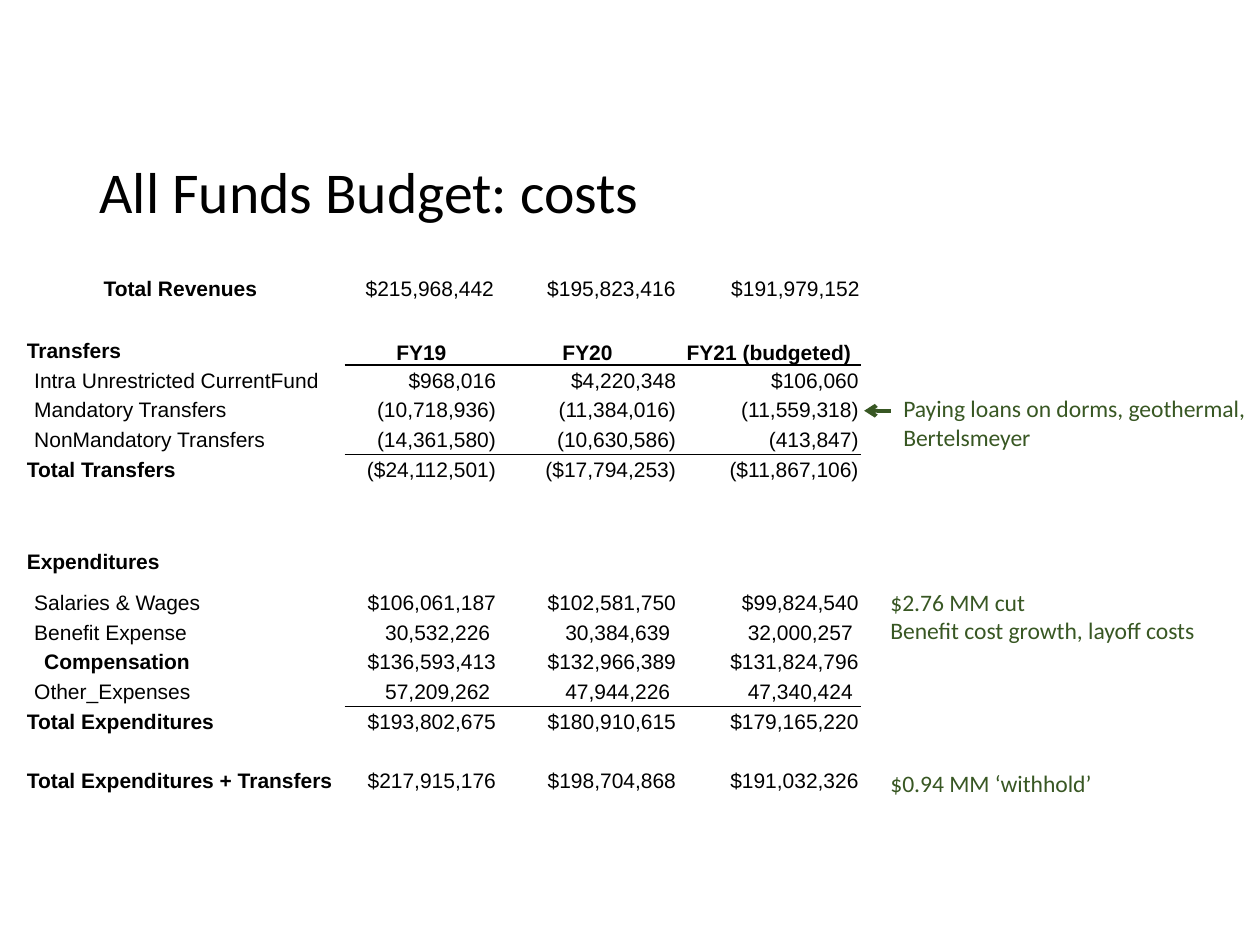
"""Build the All Funds Budget costs slide."""
import pptx
import pptx.dml.color
import pptx.enum.shapes
import pptx.enum.text
import pptx.oxml
import pptx.oxml.ns
import pptx.util

Cm = pptx.util.Cm
Pt = pptx.util.Pt
ALIGN = pptx.enum.text.PP_ALIGN
ANCHOR = pptx.enum.text.MSO_ANCHOR
INK, GREEN, PAPER = "000000", "385723", "FFFFFF"
INDENTS = (0.03, 0.18, 0.38)

TITLE_FONT = {"name": "Calibri", "size": Pt(33), "bold": False}
NOTE_FONT = {"name": "Calibri", "size": Pt(13.5)}
CELL_FONT = {"name": "Arial", "size": Pt(12)}
CELL_MARGINS = {"margin_top": Cm(0.03), "margin_right": Cm(0.03), "margin_bottom": 0}

REVENUES = [("Total Revenues", 0, True, "$215,968,442", "$195,823,416", "$191,979,152")]
BLANK = ("", 0, False, "", "", "")
COSTS = [
    ("Transfers", 0, True, "FY19", "FY20", "FY21 (budgeted)"),
    ("Intra Unrestricted CurrentFund", 1, False, "$968,016", "$4,220,348", "$106,060"),
    ("Mandatory Transfers", 1, False, "(10,718,936)", "(11,384,016)", "(11,559,318)"),
    ("NonMandatory Transfers", 1, False, "(14,361,580)", "(10,630,586)", "(413,847)"),
    ("Total Transfers", 0, True, "($24,112,501)", "($17,794,253)", "($11,867,106)"),
    BLANK,
    ("Expenditures", 0, True, "", "", ""),
    ("Salaries & Wages", 1, False, "$106,061,187", "$102,581,750", "$99,824,540"),
    ("Benefit Expense", 1, False, "30,532,226 ", "30,384,639 ", "32,000,257 "),
    ("Compensation", 2, True, "$136,593,413", "$132,966,389", "$131,824,796"),
    ("Other_Expenses", 1, False, "57,209,262 ", "47,944,226 ", "47,340,424 "),
    ("Total Expenditures", 0, True, "$193,802,675", "$180,910,615", "$179,165,220"),
    BLANK,
    ("Total Expenditures + Transfers", 0, True, "$217,915,176", "$198,704,868", "$191,032,326"),
]
COST_HEIGHTS = [1.04 if row in (5, 6) else 0.6 for row in range(len(COSTS))]


def color(value):
    return pptx.dml.color.RGBColor.from_string(value)


def apply(target, values):
    for name, value in values.items():
        setattr(target, name, value)


def element(markup):
    head, rest = markup.split(" ", 1)
    return pptx.oxml.parse_xml(f"{head} {pptx.oxml.ns.nsdecls('a')} {rest}")


class BudgetSlide:
    def __init__(self, deck):
        self.slide = deck.slides.add_slide(deck.slide_layouts[5])
        self.shapes = self.slide.shapes

    def title(self, text, left, top, width, height):
        heading = self.shapes.title
        apply(heading, {"left": Cm(left), "top": Cm(top), "width": Cm(width), "height": Cm(height)})
        heading.text_frame.vertical_anchor = ANCHOR.MIDDLE
        self.add_text(heading.text_frame.paragraphs[0], text, TITLE_FONT, INK)
        apply(heading.text_frame.paragraphs[0], {"alignment": ALIGN.LEFT, "line_spacing": 0.9})

    def add_text(self, paragraph, text, font, ink):
        run = paragraph.add_run()
        run.text = text
        apply(run.font, font)
        run.font.color.rgb = color(ink)

    def note(self, lines, left, top, width, height, wrap=False):
        frame = self.shapes.add_textbox(Cm(left), Cm(top), Cm(width), Cm(height)).text_frame
        apply(frame, {"word_wrap": wrap, "auto_size": pptx.enum.text.MSO_AUTO_SIZE.SHAPE_TO_FIT_TEXT})
        for index, line in enumerate(lines):
            paragraph = frame.add_paragraph() if index else frame.paragraphs[0]
            self.add_text(paragraph, line, NOTE_FONT, GREEN)

    def arrow(self, start, end, y):
        kind = pptx.enum.shapes.MSO_CONNECTOR.STRAIGHT
        pointer = self.shapes.add_connector(kind, Cm(start), Cm(y), Cm(end), Cm(y))
        pointer.line.color.rgb = color(GREEN)
        pointer.line.width = Pt(2.25)
        properties = pointer._element.spPr
        properties.find(pptx.oxml.ns.qn("a:ln")).append(element('<a:tailEnd type="arrow"/>'))
        properties.append(element("<a:effectLst />"))

    def table(self, rows, left, top, widths, heights, header=None, ruled=()):
        frame = self.shapes.add_table(len(rows), len(widths), Cm(left), Cm(top),
                                      Cm(sum(widths)), Cm(sum(heights)))
        grid = frame.table
        apply(grid, {"first_row": False, "horz_banding": False})
        for column, width in zip(grid.columns, widths):
            column.width = Cm(width)
        for index, (label, level, bold, *amounts) in enumerate(rows):
            grid.rows[index].height = Cm(heights[index])
            is_header = index == header
            sides = [side for side, row in (("T", index - 1), ("B", index)) if row in ruled]
            self.cell(grid.cell(index, 0), label, bold, ALIGN.LEFT, INDENTS[level])
            for position, amount in enumerate(amounts, 1):
                figure = grid.cell(index, position)
                self.cell(figure, amount, is_header, ALIGN.CENTER if is_header else ALIGN.RIGHT)
                if is_header:
                    figure.vertical_anchor = ANCHOR.BOTTOM
                self.rule(figure, sides)

    def cell(self, cell, text, bold, alignment, indent=INDENTS[0]):
        apply(cell, CELL_MARGINS | {"margin_left": Cm(indent), "vertical_anchor": ANCHOR.MIDDLE})
        cell.fill.solid()
        cell.fill.fore_color.rgb = color(PAPER)
        paragraph = cell.text_frame.paragraphs[0]
        paragraph.alignment = alignment
        if text:
            self.add_text(paragraph, text, CELL_FONT | {"bold": bold}, INK)
        else:
            paragraph._p.append(element('<a:endParaRPr sz="1200"/>'))

    def rule(self, cell, sides):
        for position, side in enumerate(sides):
            cell._tc.get_or_add_tcPr().insert(position, element(
                f'<a:ln{side} w="12700"><a:solidFill><a:srgbClr val="{INK}"/></a:solidFill></a:ln{side}>'))


def main():
    deck = pptx.Presentation()
    apply(deck, {"slide_width": Cm(25.4), "slide_height": Cm(19.05)})
    budget = BudgetSlide(deck)
    budget.table(COSTS, 0.51, 6.76, (6.45, 3.07, 3.63, 3.68), COST_HEIGHTS,
                 header=0, ruled=(0, 3, 10))
    budget.title("All Funds Budget: costs", 1.75, 2.54, 21.9, 2.76)
    budget.note(["Paying loans on dorms, geothermal, Bertelsmeyer"], 17.96, 7.82, 7.85, 1.42, wrap=True)
    budget.note(["$2.76 MM cut", "Benefit cost growth, layoff costs"], 17.7, 11.73, 6.73, 1.42)
    budget.note(["$0.94 MM ‘withhold’"], 17.7, 15.37, 4.62, 0.84)
    budget.arrow(17.96, 17.42, 8.28)
    budget.table(REVENUES, 2.06, 5.49, (5.03, 2.9, 3.66, 3.71), [0.64])
    deck.save("out.pptx")


if __name__ == "__main__":
    main()
